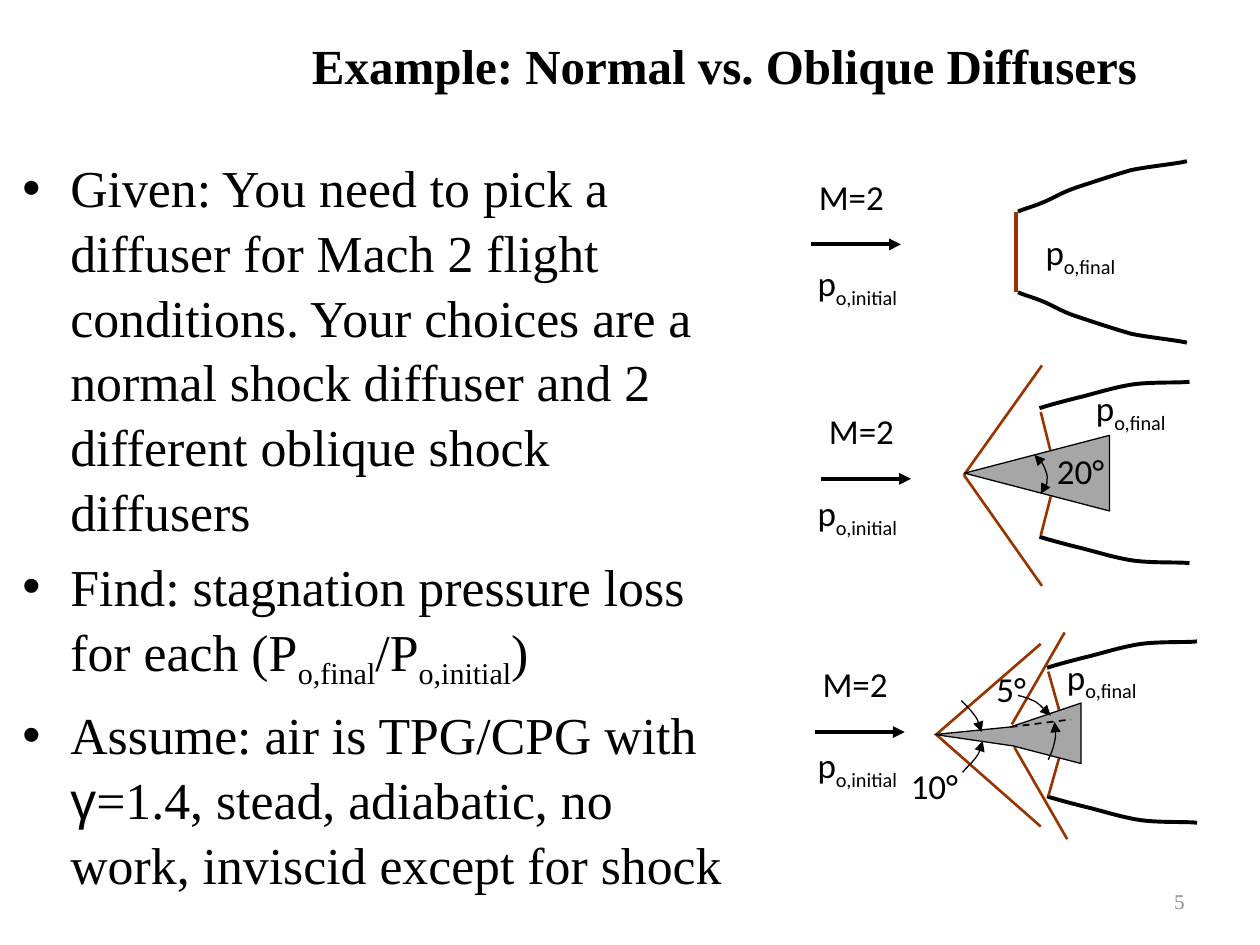
"""Build the slide comparing normal and oblique shock diffusers."""
from lxml import etree
from pptx import Presentation
from pptx import util as u
from pptx.dml.color import RGBColor
from pptx.enum import dml, shapes, text
from pptx.oxml.ns import qn

BLACK = RGBColor(0x00, 0x00, 0x00)
SHOCK = RGBColor(0x99, 0x33, 0x00)
WEDGE = RGBColor(0xA6, 0xA6, 0xA6)
MUTED = RGBColor(0x8C, 0x8C, 0x8C)
SERIF, SANS = "Times New Roman", "Calibri"

NORMAL_WALL = [(9.42, 0.72), (9.34, 0.7), (9.13, 0.68), (8.98, 0.65), (8.84, 0.61),
               (8.66, 0.55), (8.54, 0.51), (8.42, 0.47), (8.35, 0.42), (8.27, 0.39),
               (8.2, 0.36), (8.12, 0.34), (8.08, 0.32)]
OBLIQUE_WALL = [(9.44, 0.72), (9.37, 0.71), (9.15, 0.72), (9, 0.7), (8.85, 0.68),
                (8.67, 0.62), (8.54, 0.59), (8.42, 0.56), (8.31, 0.53), (8.25, 0.51)]


def add_span(para, words, size, font=SERIF, color=BLACK, bold=False, subscript=False):
    """Append one formatted run to a paragraph."""
    span = para.add_run()
    span.text = words
    span.font.size, span.font.name, span.font.bold = u.Pt(size), font, bold
    span.font.color.rgb = color
    if subscript:
        span.font._element.set("baseline", "-25000")


def add_box(page, left, top, width, height, anchor=text.MSO_ANCHOR.TOP):
    """Add an empty wrapping text box and return its text frame."""
    box = page.shapes.add_textbox(*map(u.Inches, (left, top, width, height)))
    frame = box.text_frame
    frame.word_wrap = True
    frame.vertical_anchor = anchor
    return frame


def add_label(page, words, left, top, width=0.79, subscript=""):
    """Add a diagram label with an optional subscript."""
    para = add_box(page, left, top, width, 0.43).paragraphs[0]
    add_span(para, words, 20, SANS)
    if subscript:
        add_span(para, subscript, 20, SANS, subscript=True)


def add_bullet(para, spans):
    """Fill a bulleted paragraph from (words, format) pairs."""
    props = para._p.get_or_add_pPr()
    props.set("marL", str(u.Inches(0.38)))
    props.set("indent", str(-u.Inches(0.38)))
    etree.SubElement(props, qn("a:buFont")).set("typeface", "Arial")
    etree.SubElement(props, qn("a:buChar")).set("char", "•")
    para.line_spacing = 1.04
    for words, style in spans:
        add_span(para, words, 29.6, **style)


def add_arrowheads(line, ends):
    """Put triangle heads on the named ends of a line format."""
    for end in ends:
        etree.SubElement(line._get_or_add_ln(), qn(f"a:{end}")).set("type", "triangle")


def add_line(page, start, end, color=BLACK, width=1.5, dash=None, ends=()):
    """Add a straight line without a shadow."""
    line = page.shapes.add_connector(
        shapes.MSO_CONNECTOR.STRAIGHT, *map(u.Inches, (*start, *end)))
    line.line.color.rgb = color
    line.line.width = u.Pt(width)
    if dash:
        line.line.dash_style = dash
    add_arrowheads(line.line, ends)
    etree.SubElement(line._element.spPr, qn("a:effectLst"))


def add_outline(page, points, fill=None, width=0.75, ends=()):
    """Add a freeform through the points and return it."""
    places = [(u.Inches(x), u.Inches(y)) for x, y in points]
    builder = page.shapes.build_freeform(*places[0])
    builder.add_line_segments(places[1:], close=fill is not None)
    shape = builder.convert_to_shape()
    shape.shadow.inherit = False
    if fill is None:
        shape.fill.background()
    else:
        shape.fill.solid()
        shape.fill.fore_color.rgb = fill
    shape.line.color.rgb = BLACK
    shape.line.width = u.Pt(width)
    add_arrowheads(shape.line, ends)
    return shape


def add_curve(page, points, **style):
    """Add an open Bezier curve given its start and control points."""
    steps = list(add_outline(page, points, **style)._element.iter(qn("a:lnTo")))
    for first, second, last in zip(steps[::3], steps[1::3], steps[2::3]):
        first.tag = qn("a:cubicBezTo")
        for step in (second, last):
            first.append(step[0])
            step.getparent().remove(step)


def add_duct(page, wall, axis, shift=0):
    """Draw both duct walls, mirrored about a horizontal axis."""
    for side in (1, -1):
        add_curve(page, [(x + shift, axis + side * y) for x, y in wall], width=2.25)


def add_free_stream(page, left, top, pressure_top):
    """Draw the incoming flow arrow with its two labels."""
    add_line(page, (left, top), (left + 0.71, top), width=2.25, ends=["tailEnd"])
    add_label(page, "M=2", left - 0.04, top - 0.6, 0.77)
    add_label(page, "p", 6.39, pressure_top, 0.9, "o,initial")


def add_shocks(page, *lines):
    """Draw oblique shock lines."""
    for start, end in lines:
        add_line(page, start, end, SHOCK)


def add_normal_diffuser(page):
    """Draw the normal shock diffuser."""
    add_duct(page, NORMAL_WALL, 2)
    add_line(page, (8.06, 1.68), (8.06, 2.32), SHOCK, 2.25)
    add_free_stream(page, 6.44, 1.94, 2.03)
    add_label(page, "p", 8.2, 1.78, 0.9, "o,final")


def add_single_wedge_diffuser(page):
    """Draw the diffuser with one wedge."""
    add_duct(page, OBLIQUE_WALL, 3.75)
    tip = (7.65, 3.77)
    add_shocks(page, ((8.26, 3.27), (8.34, 3.59)), (tip, (8.27, 2.9)),
               ((8.26, 4.25), (8.34, 3.94)), (tip, (8.27, 4.65)))
    wedge = page.shapes.add_shape(shapes.MSO_SHAPE.ISOSCELES_TRIANGLE,
                                  *map(u.Inches, (7.93, 3.18, 0.6, 1.15)))
    wedge.rotation = 270
    wedge.shadow.inherit = False
    wedge.fill.solid()
    wedge.fill.fore_color.rgb = WEDGE
    wedge.line.color.rgb = BLACK
    wedge.line.width = u.Pt(0.75)
    add_curve(page, [(8.21, 3.61), (8.24, 3.64), (8.27, 3.67), (8.29, 3.71),
                     (8.3, 3.74), (8.32, 3.78), (8.31, 3.81),
                     (8.31, 3.85), (8.27, 3.9), (8.26, 3.92)],
              ends=["headEnd", "tailEnd"])
    add_label(page, "20°", 8.29, 3.52)
    add_free_stream(page, 6.52, 3.8, 3.85)
    add_label(page, "p", 8.6, 3.02, 0.9, "o,final")


def add_double_wedge_diffuser(page):
    """Draw the diffuser whose wedge turns the flow twice."""
    add_duct(page, OBLIQUE_WALL, 5.81, 0.06)
    tip = (7.43, 5.83)
    add_shocks(page, ((8.32, 5.33), (8.41, 5.65)), ((8.32, 6.32), (8.41, 6)),
               (tip, (8.26, 5.11)), (tip, (8.26, 6.56)))
    add_label(page, "10°", 7.13, 6.02)
    add_outline(page, [(7.42, 5.83), (8.02, 5.77), (8.58, 5.58), (8.58, 6.06),
                       (8.04, 5.92)], WEDGE)
    add_shocks(page, ((8.03, 5.75), (8.45, 5.02)), ((8.05, 5.93), (8.47, 6.66)))
    add_line(page, (8.02, 5.77), (8.5, 5.71), width=1, dash=dml.MSO_LINE.DASH)
    add_label(page, "5°", 7.81, 5.25)
    angle_arcs = [
        [(7.63, 5.56), (7.66, 5.59), (7.7, 5.63), (7.73, 5.67),
         (7.76, 5.71), (7.78, 5.76), (7.79, 5.81)],
        [(7.64, 6.13), (7.67, 6.09), (7.71, 6.06), (7.74, 6.02),
         (7.77, 5.98), (7.79, 5.93), (7.8, 5.88)],
        [(8.08, 5.52), (8.13, 5.53), (8.18, 5.55), (8.22, 5.57),
         (8.26, 5.6), (8.3, 5.64), (8.34, 5.68)],
        [(8.32, 6.03), (8.34, 5.99), (8.36, 5.94), (8.37, 5.89),
         (8.38, 5.84), (8.38, 5.79), (8.37, 5.73)]]
    for arc in angle_arcs:
        add_curve(page, arc, ends=["tailEnd"])
    add_free_stream(page, 6.47, 5.81, 5.85)
    add_label(page, "p", 8.37, 5.15, 0.9, "o,final")


def add_problem(page):
    """Write the title, the problem statement and the page number."""
    title = add_box(page, 2, 0.15, 7.5, 0.73, text.MSO_ANCHOR.MIDDLE).paragraphs[0]
    title.alignment = text.PP_ALIGN.CENTER
    add_span(title, "Example: Normal vs. Oblique Diffusers", 28, bold=True)
    low = {"subscript": True}
    bullets = [
        [("Given: You need to pick a diffuser for Mach 2 flight conditions. Your choices "
          "are a normal shock diffuser and 2 different oblique shock diffusers", {})],
        [("Find: stagnation pressure loss for each (P", {}), ("o,final", low),
         ("/P", {}), ("o,initial", low), (")", {})],
        [("Assume: air is TPG/CPG with ", {}), ("γ", {"font": "Arial"}),
         ("=1.4, stead, adiabatic, no work, inviscid except for shock", {})]]
    frame = add_box(page, 0.08, 1.17, 5.92, 5.92)
    for index, spans in enumerate(bullets):
        para = frame.add_paragraph() if index else frame.paragraphs[0]
        add_bullet(para, spans)
        if index:
            para.space_before = u.Pt(6)
    number = add_box(page, 7.17, 6.95, 2.33, 0.4, text.MSO_ANCHOR.MIDDLE).paragraphs[0]
    number.alignment = text.PP_ALIGN.RIGHT
    add_span(number, "5", 12, color=MUTED)


def main():
    """Build and save the deck."""
    deck = Presentation()
    deck.slide_width, deck.slide_height = u.Inches(10), u.Inches(7.5)
    page = deck.slides.add_slide(deck.slide_layouts[6])
    add_problem(page)
    add_normal_diffuser(page)
    add_single_wedge_diffuser(page)
    add_double_wedge_diffuser(page)
    deck.save("out.pptx")


if __name__ == "__main__":
    main()
